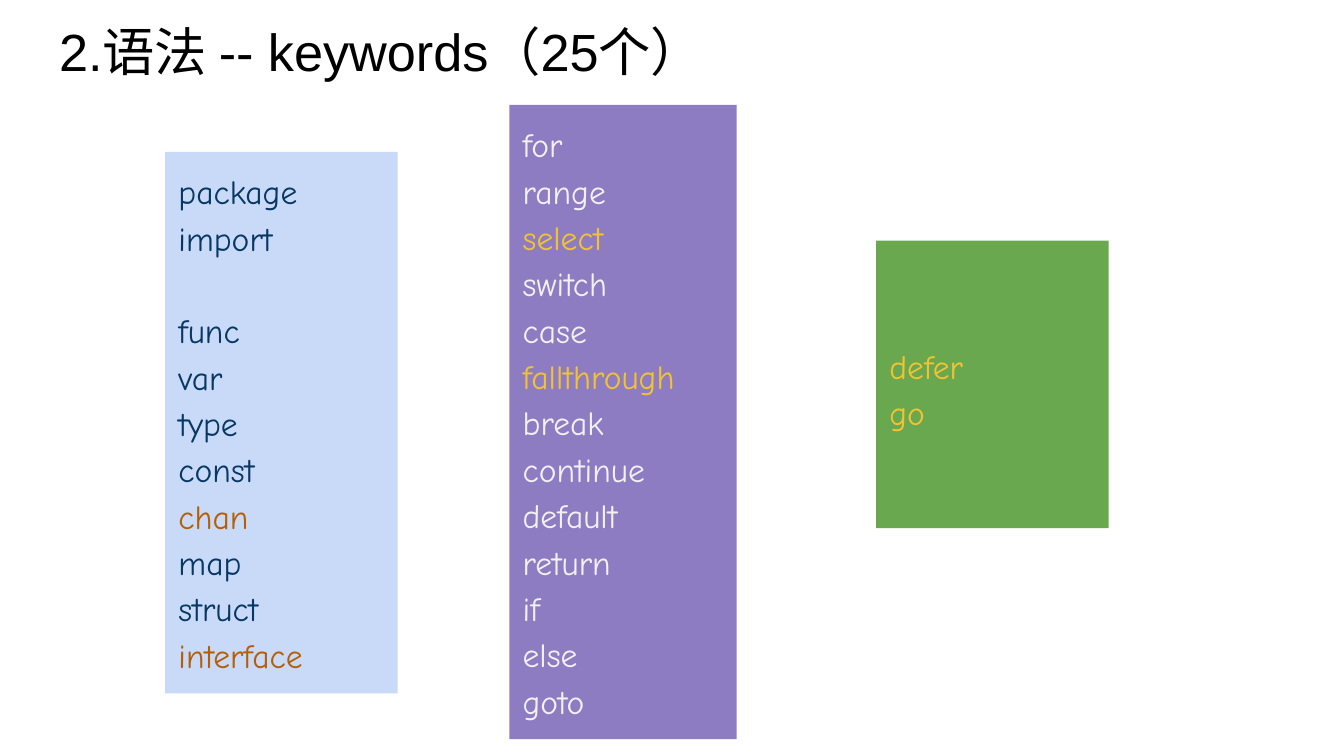
from dataclasses import dataclass

from pptx import Presentation
from pptx.dml.color import RGBColor
from pptx.enum.shapes import MSO_SHAPE
from pptx.enum.text import MSO_ANCHOR, MSO_AUTO_SIZE, PP_ALIGN
from pptx.util import Inches, Pt


@dataclass(frozen=True)
class Theme:
    title_font: str = "Arial"
    keyword_font: str = "Comic Neue"
    title_size: float = 28
    keyword_size: float = 18
    group_gap: float = 24.8
    line_spacing: float = 1.15
    inset: float = 0.1
    black: str = "000000"
    pale_blue: str = "C9DAF8"
    navy: str = "073763"
    brown: str = "B45F06"
    purple: str = "8E7CC3"
    off_white: str = "F1F1F1"
    gold: str = "F1C232"
    green: str = "6AA84F"


class SlideBuilder:
    def __init__(self, slide, theme):
        self.slide = slide
        self.theme = theme

    def prepare_frame(self, shape, top_inset):
        frame = shape.text_frame
        frame.word_wrap = True
        frame.auto_size = MSO_AUTO_SIZE.NONE
        frame.vertical_anchor = MSO_ANCHOR.TOP
        frame.margin_left = frame.margin_right = Inches(self.theme.inset)
        frame.margin_bottom = Inches(self.theme.inset)
        frame.margin_top = Inches(top_inset)
        return frame

    def style_paragraph(self, paragraph, text, font, size, color):
        paragraph.text = text
        paragraph.alignment = PP_ALIGN.LEFT
        paragraph.font.name = font
        paragraph.font.size = Pt(size)
        paragraph.font.color.rgb = RGBColor.from_string(color)

    def title(self, text, left, top, width, height):
        shape = self.slide.shapes.title
        shape.left, shape.top = Inches(left), Inches(top)
        shape.width, shape.height = Inches(width), Inches(height)
        frame = self.prepare_frame(shape, self.theme.inset)
        self.style_paragraph(frame.paragraphs[0], text, self.theme.title_font,
                             self.theme.title_size, self.theme.black)

    def keyword_box(self, box, fill, groups, color, highlight, highlighted, top_inset):
        shape = self.slide.shapes.add_shape(
            MSO_SHAPE.RECTANGLE, *(Inches(length) for length in box))
        shape.shadow.inherit = False
        shape.fill.solid()
        shape.fill.fore_color.rgb = RGBColor.from_string(fill)
        shape.line.fill.background()
        frame = self.prepare_frame(shape, top_inset)
        paragraph = frame.paragraphs[0]
        for group_index, group in enumerate(groups):
            for word_index, word in enumerate(group.split()):
                if group_index or word_index:
                    paragraph = frame.add_paragraph()
                self.style_paragraph(paragraph, word, self.theme.keyword_font,
                                     self.theme.keyword_size,
                                     highlight if word in highlighted else color)
                paragraph.line_spacing = self.theme.line_spacing
                if group_index and not word_index:
                    paragraph.space_before = Pt(self.theme.group_gap)


def main():
    theme = Theme()
    presentation = Presentation()
    presentation.slide_width = Inches(10)
    presentation.slide_height = presentation.slide_width * 9 // 16
    slide = presentation.slides.add_slide(presentation.slide_layouts[5])
    builder = SlideBuilder(slide, theme)

    builder.title("2.语法 -- keywords（25个）", 0.34, 0.04, 9.32, 0.63)
    highlighted = {"chan", "interface", "select", "fallthrough", "defer", "go"}
    declarations = ["package import", "func var type const chan map struct interface"]
    control_flow = ["for range select switch case fallthrough break continue "
                    "default return if else goto"]
    builder.keyword_box((1.23, 1.13, 1.73, 4.03), theme.pale_blue, declarations,
                        theme.navy, theme.brown, highlighted, theme.inset)
    builder.keyword_box((3.79, 0.78, 1.69, 4.72), theme.purple, control_flow,
                        theme.off_white, theme.gold, highlighted, theme.inset)
    builder.keyword_box((6.52, 1.79, 1.73, 2.14), theme.green, ["defer go"],
                        theme.gold, theme.gold, highlighted, 0.74)
    presentation.save("out.pptx")


if __name__ == "__main__":
    main()
